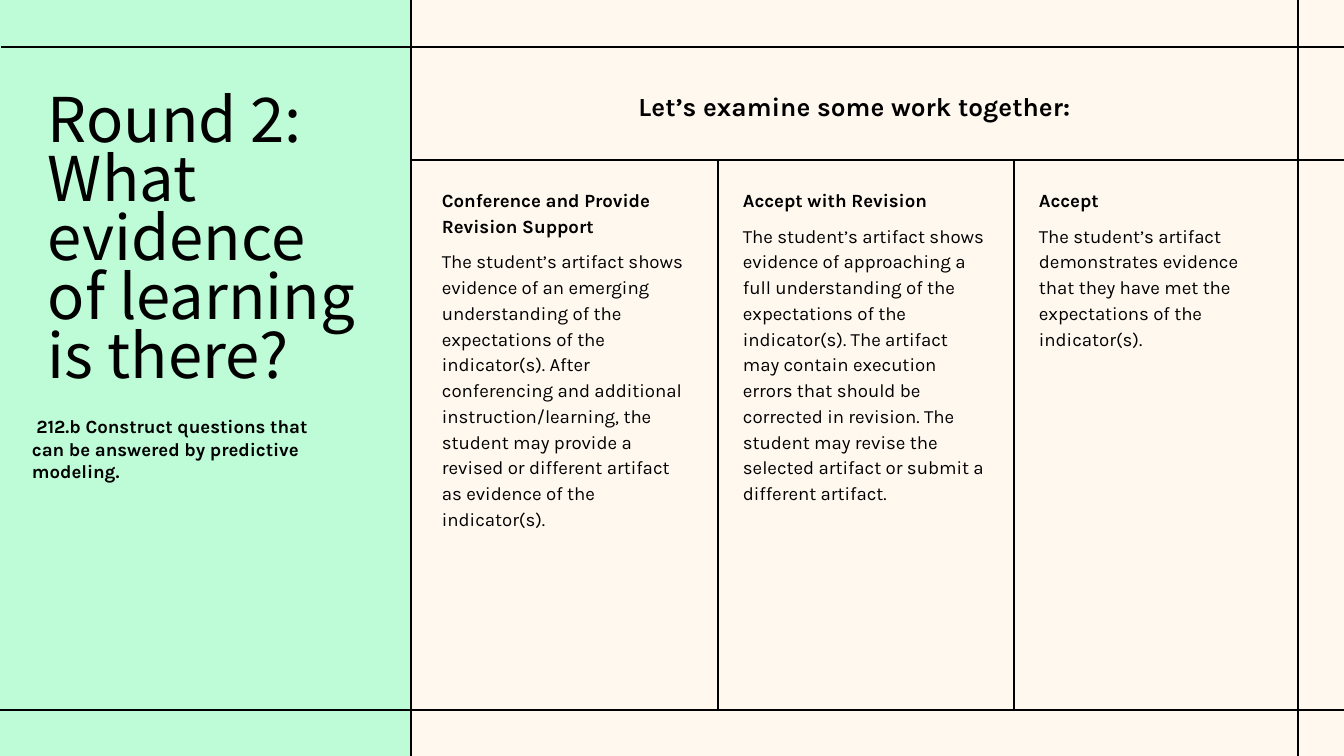
import pptx
import pptx.util
import pptx.dml.color
import pptx.enum.shapes
import pptx.enum.text
import pptx.oxml.ns
import lxml.etree

WIDE, HIGH = 1344, 756
SCALE = 914400 / 134.4
INK, MINT, CREAM = "000000", "BDFCD7", "FFF8EF"
SANS, TITLE = "Karla", "Noto Sans CJK KR"
CARDS = [
    (411, "Conference and Provide Revision Support",
     "The student’s artifact shows evidence of an emerging understanding of the "
     "expectations of the indicator(s). After conferencing and additional "
     "instruction/learning, the student may provide a revised or different "
     "artifact as evidence of the indicator(s)."),
    (718, "Accept with Revision",
     "The student’s artifact shows evidence of approaching a full understanding "
     "of the expectations of the indicator(s). The artifact may contain execution "
     "errors that should be corrected in revision. The student may revise the "
     "selected artifact or submit a different artifact."),
    (1014, "Accept",
     "The student’s artifact demonstrates evidence \nthat they have met the "
     "expectations of the indicator(s)."),
]


def px(size):
    return pptx.util.Emu(round(size * SCALE))


def paint(color, code):
    color.rgb = pptx.dml.color.RGBColor.from_string(code)


def line(slide, x1, y1, x2, y2):
    rule = slide.shapes.add_connector(
        pptx.enum.shapes.MSO_CONNECTOR.STRAIGHT, px(x1), px(y1), px(x2), px(y2))
    paint(rule.line.color, INK)
    rule.line.width = pptx.util.Pt(0.75)
    lxml.etree.SubElement(rule._element.spPr, pptx.oxml.ns.qn("a:effectLst"))


def text(slide, box, paras, size=10, font=SANS, align="LEFT", lead=None, gap=None):
    frame = slide.shapes.add_textbox(*map(px, box)).text_frame
    frame.word_wrap = True
    frame.margin_left = frame.margin_right = 0
    frame.margin_top = frame.margin_bottom = 0
    for i, runs in enumerate(paras):
        para = frame.add_paragraph() if i else frame.paragraphs[0]
        para.alignment = getattr(pptx.enum.text.PP_ALIGN, align)
        if lead:
            para.line_spacing = lead
        if i and gap:
            para.space_before = para.space_after = pptx.util.Pt(gap)
        for words, bold in runs:
            for j, part in enumerate(words.split("\n")):
                if j:
                    para.add_line_break()
                run = para.add_run()
                run.text = part
                run.font.size = pptx.util.Pt(size)
                run.font.name = font
                run.font.bold = bold
                paint(run.font.color, INK)


def header(slide, x, y, w, h):
    line(slide, 1, y + h, WIDE + 2, y + h)
    text(slide, (x + 47, y + 43, w - 94, 32),
         [[("Let’s examine some work together:", True)]], size=14, align="CENTER")


def panel(slide, x, y, w, h):
    side = slide.shapes.add_shape(
        pptx.enum.shapes.MSO_SHAPE.RECTANGLE, *map(px, (x, y, w, h)))
    side.shadow.inherit = False
    side.fill.solid()
    paint(side.fill.fore_color, MINT)
    side.line.fill.background()
    text(slide, (x + 48, y + 95, 319, 298),
         [[("Round 2:", False)], [("What evidence of learning is there?", False)]],
         size=33, font=TITLE, lead=0.8)
    text(slide, (x + 32, y + 415, 276, 67),
         [[(" ", False),
           ("212.b Construct questions that can be answered by predictive modeling.",
            True)]])


def grid(slide, x, y, w, h):
    line(slide, -2, y + h, WIDE + 2, y + h)
    line(slide, 1, y, WIDE + 2, y)
    for side in (x, x + w):
        line(slide, side, -1, side, HIGH + 1)


def card(slide, x, y, w, h, head, body):
    text(slide, (x, y, w, h), [[(head, True)], [(body, False)]], lead=1.15, gap=5)


def main():
    deck = pptx.Presentation()
    deck.slide_width, deck.slide_height = px(WIDE), px(HIGH)
    slide = deck.slides.add_slide(deck.slide_layouts[6])
    slide.background.fill.solid()
    paint(slide.background.fill.fore_color, CREAM)
    header(slide, 411, 47, 887, 113)
    panel(slide, 0, 0, 411, HIGH)
    grid(slide, 411, 47, 887, 663)
    for i, (left, head, body) in enumerate(CARDS):
        if i:
            line(slide, left, 160, left, 710)
        card(slide, left + (25 if i else 31), 186, 245, 344, head, body)
    deck.save("out.pptx")


if __name__ == "__main__":
    main()
